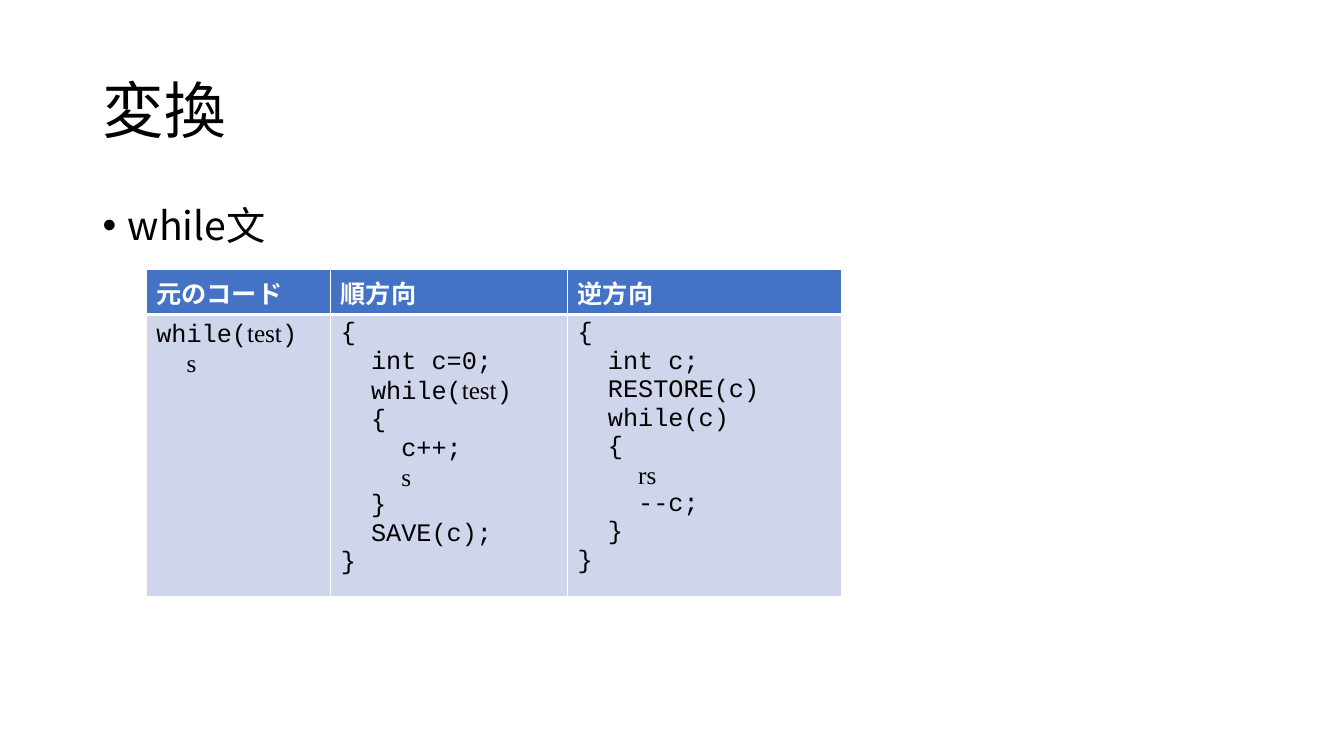
from dataclasses import dataclass

from lxml import etree
from pptx import Presentation
from pptx.dml.color import RGBColor
from pptx.enum.text import MSO_ANCHOR, PP_ALIGN
from pptx.oxml.ns import qn
from pptx.util import Inches, Pt

LEFT = PP_ALIGN.LEFT
TOP = MSO_ANCHOR.TOP
MIDDLE = MSO_ANCHOR.MIDDLE
TITLE_ONLY = 5


@dataclass(frozen=True)
class Theme:
    body_font: str = "Noto Sans CJK JP"
    code_font: str = "Courier New"
    variable_font: str = "Times New Roman"
    ink: str = "000000"
    paper: str = "FFFFFF"
    header_fill: str = "4472C4"
    code_fill: str = "CFD5EA"
    title_size: int = 44
    bullet_size: int = 28
    table_size: int = 18
    code_indent: float = 0.3


# Content: code lines are (nesting level, text); backticks enclose variables
HEADERS = ["元のコード", "順方向", "逆方向"]
ORIGINAL_CODE = [(0, "while(`test`)"), (1, "`s`")]
FORWARD_CODE = [
    (0, "{"), (1, "int c=0;"), (1, "while(`test`)"), (1, "{"), (2, "c++;"),
    (2, "`s`"), (1, "}"), (1, "SAVE(c);"), (0, "}"),
]
REVERSE_CODE = [
    (0, "{"), (1, "int c;"), (1, "RESTORE(c)"), (1, "while(c)"), (1, "{"),
    (2, "`rs`"), (2, "--c;"), (1, "}"), (0, "}"),
]


def write_text(frame, lines, *, size, font, color, variable_font=None,
               bold=False, indent=0, bullet=False, line_spacing=None,
               space_before=0, anchor=TOP):
    """Fill a text frame with (level, text) lines."""
    frame.word_wrap = True
    frame.vertical_anchor = anchor
    for number, (level, text) in enumerate(lines):
        paragraph = frame.add_paragraph() if number else frame.paragraphs[0]
        paragraph.alignment = LEFT
        paragraph.space_before = Pt(space_before)
        if line_spacing:
            paragraph.line_spacing = line_spacing
        properties = paragraph._p.get_or_add_pPr()
        margin = indent if bullet else level * indent
        properties.set("marL", str(Inches(margin)))
        properties.set("indent", str(Inches(-indent if bullet else 0)))
        if bullet:
            bullet_font = etree.SubElement(properties, qn("a:buFont"))
            bullet_font.set("typeface", "Arial")
            etree.SubElement(properties, qn("a:buChar")).set("char", "•")
        for position, part in enumerate(text.split("`")):
            if not part:
                continue
            run = paragraph.add_run()
            run.text = part
            run.font.size = Pt(size)
            run.font.bold = bold
            run.font.color.rgb = RGBColor.from_string(color)
            run.font.name = variable_font if position % 2 else font
            east_asian = etree.SubElement(run._r.get_or_add_rPr(), qn("a:ea"))
            east_asian.set("typeface", run.font.name)


class SlideBuilder:
    def __init__(self, slide, theme):
        self.slide = slide
        self.theme = theme

    def title(self, text, left, top, width, height):
        title = self.slide.shapes.title
        title.left, title.top = Inches(left), Inches(top)
        title.width, title.height = Inches(width), Inches(height)
        write_text(title.text_frame, [(0, text)], size=self.theme.title_size,
                   font=self.theme.body_font, color=self.theme.ink,
                   line_spacing=0.9, anchor=MIDDLE)

    def bullets(self, items, left, top, width, height):
        body = self.slide.shapes.add_textbox(
            Inches(left), Inches(top), Inches(width), Inches(height))
        write_text(body.text_frame, [(0, item) for item in items],
                   size=self.theme.bullet_size, font=self.theme.body_font,
                   color=self.theme.ink, indent=0.25, bullet=True,
                   line_spacing=0.9, space_before=10)

    def style_cell(self, cell, fill, bottom_width):
        properties = cell._tc.get_or_add_tcPr()
        widths = {"L": 1, "R": 1, "T": 1, "B": bottom_width}
        for side, width in widths.items():
            border = etree.SubElement(properties, qn(f"a:ln{side}"))
            border.set("w", str(Pt(width)))
            line_fill = etree.SubElement(border, qn("a:solidFill"))
            color = etree.SubElement(line_fill, qn("a:srgbClr"))
            color.set("val", self.theme.paper)
        cell.fill.solid()
        cell.fill.fore_color.rgb = RGBColor.from_string(fill)

    def code_table(self, headers, codes, left, top, widths, heights):
        table = self.slide.shapes.add_table(
            2, len(headers), Inches(left), Inches(top),
            Inches(sum(widths)), Inches(sum(heights))).table
        for row, height in zip(table.rows, heights):
            row.height = Inches(height)
        for index, (header, code) in enumerate(zip(headers, codes)):
            table.columns[index].width = Inches(widths[index])
            header_cell, code_cell = table.cell(0, index), table.cell(1, index)
            self.style_cell(header_cell, self.theme.header_fill, 3)
            self.style_cell(code_cell, self.theme.code_fill, 1)
            # The edge shared with the header keeps the header's weight
            code_cell._tc.tcPr.find(qn("a:lnT")).set("w", str(Pt(3)))
            write_text(header_cell.text_frame, [(0, header)],
                       size=self.theme.table_size, font=self.theme.body_font,
                       color=self.theme.paper, bold=True)
            write_text(code_cell.text_frame, code,
                       size=self.theme.table_size, font=self.theme.code_font,
                       variable_font=self.theme.variable_font,
                       color=self.theme.ink, indent=self.theme.code_indent)


def main():
    presentation = Presentation()
    presentation.slide_width = Inches(13.33)
    presentation.slide_height = Inches(7.5)
    slide = presentation.slides.add_slide(
        presentation.slide_layouts[TITLE_ONLY])
    builder = SlideBuilder(slide, Theme())

    # Heading and topic
    builder.title("変換", 0.92, 0.4, 11.5, 1.45)
    builder.bullets(["while文"], 0.92, 2, 11.5, 4.76)

    # Code before and after the conversion
    builder.code_table(HEADERS, [ORIGINAL_CODE, FORWARD_CODE, REVERSE_CODE],
                       left=1.45, top=2.67, widths=[1.83, 2.35, 2.72],
                       heights=[0.45, 2.67])
    presentation.save("out.pptx")


if __name__ == "__main__":
    main()
